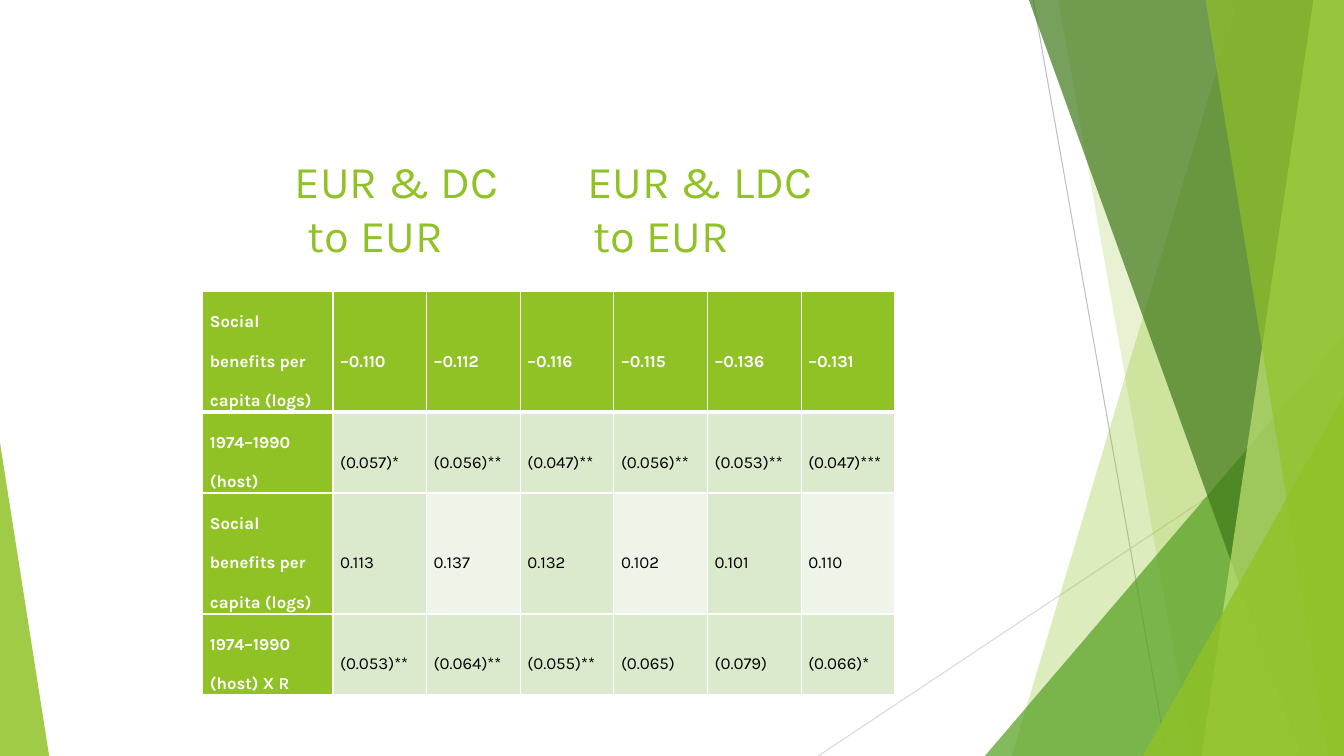
import dataclasses

import pptx
import pptx.dml.color
import pptx.enum.shapes
import pptx.enum.text
import pptx.oxml
import pptx.oxml.ns
import pptx.util

Cm = pptx.util.Cm
Pt = pptx.util.Pt
RGBColor = pptx.dml.color.RGBColor

LIME = RGBColor(0x90, 0xC2, 0x26)
GREEN = RGBColor(0x54, 0xA0, 0x21)
DARK = RGBColor(0x3F, 0x78, 0x19)
PALE = RGBColor(0xC0, 0xE4, 0x74)
BAND = RGBColor(0xDB, 0xE9, 0xCD)
LIGHT = RGBColor(0xEE, 0xF4, 0xE8)
WHITE = RGBColor(0xFF, 0xFF, 0xFF)
BLACK = RGBColor(0x00, 0x00, 0x00)
GREY = RGBColor(0xBF, 0xBF, 0xBF)
SILVER = RGBColor(0xD9, 0xD9, 0xD9)

FONT = "Karla"
WIDE, HIGH = 33.87, 19.05


@dataclasses.dataclass
class Ray:
    x1: float
    y1: float
    x2: float
    y2: float
    color: RGBColor


@dataclasses.dataclass
class Pane:
    """A full-height area from a slanted left edge to the right slide edge."""
    top: float
    foot: float
    color: RGBColor
    alpha: int


@dataclasses.dataclass
class Wedge:
    """A right triangle standing on the bottom slide edge."""
    left: float
    top: float
    width: float
    peak: float
    color: RGBColor
    alpha: int


@dataclasses.dataclass
class Line:
    """A title line: its texts, and the tab stop in cm of each."""
    texts: tuple[str, ...]
    stops: tuple[float, ...]


RAYS = [
    Ray(26.04, 0, 29.41, HIGH, GREY),
    Ray(WIDE, 10.24, 20.62, HIGH, SILVER),
]
AREAS = [
    Pane(31.19, 25.5, LIME, 30),
    Pane(26.67, 30.05, LIME, 20),
    Wedge(24.82, 8.46, 9.05, 1, GREEN, 72),
    Pane(25.93, 32.79, DARK, 70),
    Pane(33.1, 30.28, PALE, 70),
    Pane(30.38, 33.48, LIME, 65),
    Wedge(28.8, 9.98, 5.07, 1, LIME, 80),
    Wedge(0, 11.15, 1.24, 0, LIME, 85),
]
TITLE = [
    Line(("EUR & DC", "EUR & LDC"), (5.1, 12.47)),
    Line(("to EUR", "to EUR"), (5.43, 12.64)),
]
ROWS = [
    ("Social benefits per capita (logs)",
     "–0.110", "–0.112", "–0.116", "–0.115", "–0.136", "–0.131"),
    ("1974–1990 (host)",
     "(0.057)*", "(0.056)**", "(0.047)**", "(0.056)**", "(0.053)**", "(0.047)***"),
    ("Social benefits per capita (logs)",
     "0.113", "0.137", "0.132", "0.102", "0.101", "0.110"),
    ("1974–1990 (host) X R",
     "(0.053)**", "(0.064)**", "(0.055)**", "(0.065)", "(0.079)", "(0.066)*"),
]
WIDTHS = [3.28] + [2.36] * 6
HEIGHTS = [2.97, 1.96] * 2


def add_node(host, tag: str, **attrs: str):
    node = pptx.oxml.parse_xml(f"<{tag} {pptx.oxml.ns.nsdecls('a')}/>")
    for key, value in attrs.items():
        node.set(key, value)
    host.append(node)
    return node


def add_run(para, text: str, size: float, color: RGBColor, bold: bool = False) -> None:
    run = para.add_run()
    run.text = text
    font = run.font
    font.name, font.size, font.bold = FONT, Pt(size), bold
    font.color.rgb = color


def draw_ray(shapes, ray: Ray) -> None:
    line = shapes.add_connector(
        pptx.enum.shapes.MSO_CONNECTOR.STRAIGHT,
        Cm(ray.x1), Cm(ray.y1), Cm(ray.x2), Cm(ray.y2))
    line.line.color.rgb = ray.color
    line.line.width = Pt(0.75)
    add_node(line._element.spPr, "a:effectLst")


def draw_area(shapes, area: Pane | Wedge) -> None:
    if isinstance(area, Pane):
        pen = shapes.build_freeform(Cm(area.top), 0)
        pen.add_line_segments([
            (Cm(WIDE), 0), (Cm(WIDE), Cm(HIGH)), (Cm(area.foot), Cm(HIGH))])
        shape = pen.convert_to_shape()
    else:
        shape = shapes.add_shape(
            pptx.enum.shapes.MSO_SHAPE.ISOSCELES_TRIANGLE,
            Cm(area.left), Cm(area.top), Cm(area.width), Cm(HIGH - area.top))
        shape.adjustments[0] = area.peak
    shape.shadow.inherit = False
    shape.line.fill.background()
    shape.fill.solid()
    shape.fill.fore_color.rgb = area.color
    tint = shape._element.spPr.find(".//" + pptx.oxml.ns.qn("a:srgbClr"))
    add_node(tint, "a:alpha", val=str(area.alpha * 1000))


def draw_title(shapes) -> None:
    box = shapes.add_textbox(Cm(2.08), Cm(3.66), Cm(23.88), Cm(3.66))
    frame = box.text_frame
    frame.word_wrap = True
    frame.margin_top = Cm(0.2)
    for i, line in enumerate(TITLE):
        para = frame.paragraphs[0] if i == 0 else frame.add_paragraph()
        tabs = add_node(para._p.get_or_add_pPr(), "a:tabLst")
        for text, stop in zip(line.texts, line.stops):
            add_node(tabs, "a:tab", pos=str(Cm(stop)), algn="l")
            add_run(para, "\t" + text, 32.4, LIME)


def set_edges(cell, row: int) -> None:
    """Give a cell white borders, with a thick one under the first row."""
    props = cell._tc.get_or_add_tcPr()
    thick = {(0, "B"), (1, "T")}
    for i, side in enumerate("LRTB"):
        width = Pt(3 if (row, side) in thick else 1)
        edge = add_node(props, f"a:ln{side}", w=str(width))
        fill = add_node(edge, "a:solidFill")
        add_node(fill, "a:srgbClr", val=str(WHITE))
        props.insert(i, edge)


def fill_cell(cell, text: str, row: int, col: int) -> None:
    head = row == 0 or col == 0
    light = row == 2 and col % 2 == 0
    cell.fill.solid()
    cell.fill.fore_color.rgb = LIME if head else LIGHT if light else BAND
    cell.vertical_anchor = pptx.enum.text.MSO_ANCHOR.MIDDLE
    cell.margin_left = cell.margin_right = Cm(0.18)
    cell.margin_top = cell.margin_bottom = 0
    para = cell.text_frame.paragraphs[0]
    para.line_spacing = 2.0
    if col == 0:
        para.space_after = Pt(10)
    add_run(para, text, 12, WHITE if head else BLACK, head)
    set_edges(cell, row)


def draw_table(shapes) -> None:
    table = shapes.add_table(
        len(ROWS), len(WIDTHS), Cm(5.11), Cm(7.34),
        Cm(sum(WIDTHS)), Cm(sum(HEIGHTS))).table
    table.first_col = True
    for col, width in zip(table.columns, WIDTHS):
        col.width = Cm(width)
    for r, texts in enumerate(ROWS):
        table.rows[r].height = Cm(HEIGHTS[r])
        for c, text in enumerate(texts):
            fill_cell(table.cell(r, c), text, r, c)


def main() -> None:
    deck = pptx.Presentation()
    deck.slide_width, deck.slide_height = Cm(WIDE), Cm(HIGH)
    shapes = deck.slides.add_slide(deck.slide_layouts[6]).shapes
    for ray in RAYS:
        draw_ray(shapes, ray)
    for area in AREAS:
        draw_area(shapes, area)
    draw_title(shapes)
    draw_table(shapes)
    deck.save("out.pptx")


if __name__ == "__main__":
    main()
